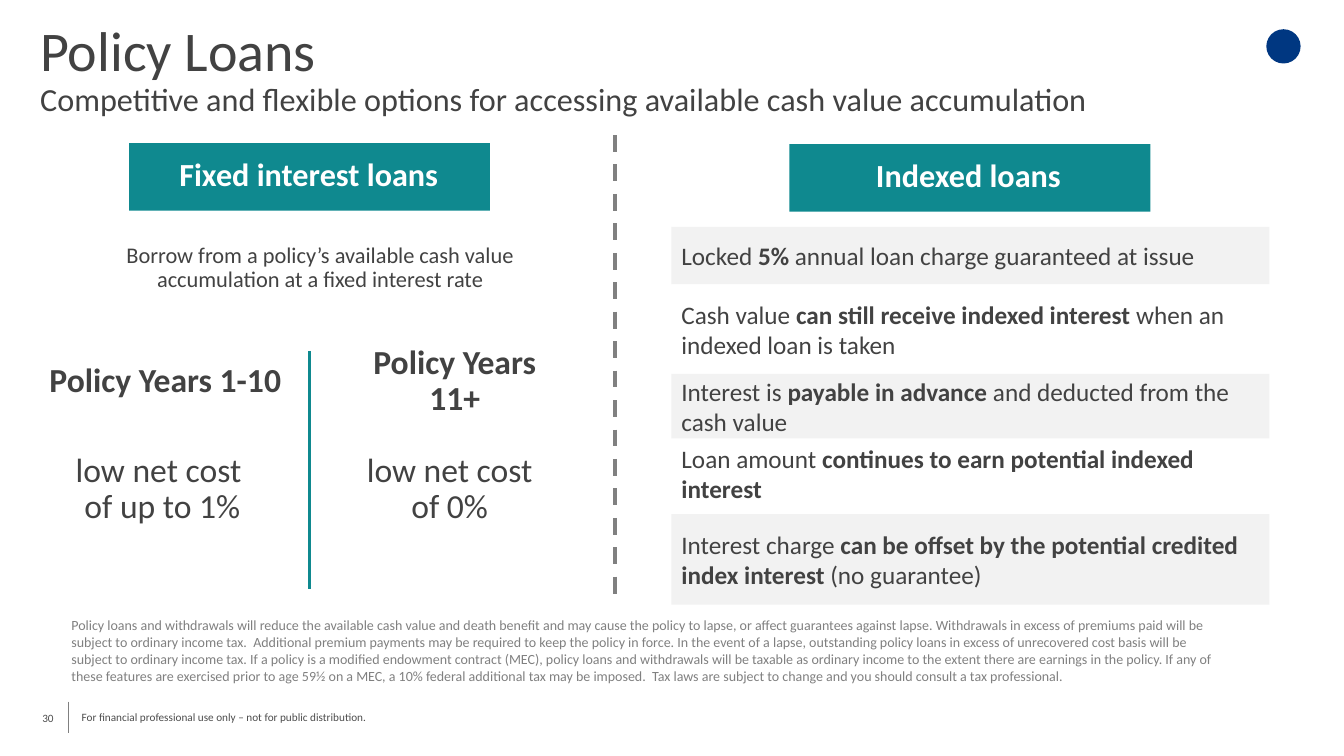
from itertools import cycle

from lxml.etree import SubElement
from pptx import Presentation
from pptx.dml.color import RGBColor
from pptx.enum.dml import MSO_LINE
from pptx.enum.shapes import MSO_CONNECTOR, MSO_SHAPE
from pptx.enum.text import MSO_ANCHOR, PP_ALIGN
from pptx.oxml.ns import qn
from pptx.util import Pt

SCALE = 9144  # EMU in one px, 100 px to the inch

TEAL = RGBColor(0x0F, 0x89, 0x8F)
NAVY = RGBColor(0x00, 0x37, 0x81)
DARK = RGBColor(0x42, 0x42, 0x42)
SLATE = RGBColor(0x4D, 0x4D, 0x4D)
GRAY = RGBColor(0x80, 0x80, 0x80)
PALE = RGBColor(0xF2, 0xF2, 0xF2)
WHITE = RGBColor(0xFF, 0xFF, 0xFF)

LEFT, CENTER = PP_ALIGN.LEFT, PP_ALIGN.CENTER
TOP, MIDDLE = MSO_ANCHOR.TOP, MSO_ANCHOR.MIDDLE

NOTICE = (
    "Policy loans and withdrawals will reduce the available cash value and death "
    "benefit and may cause the policy to lapse, or affect guarantees against lapse. "
    "Withdrawals in excess of premiums paid will be subject to ordinary income tax.  "
    "Additional premium payments may be required to keep the policy in force. In the "
    "event of a lapse, outstanding policy loans in excess of unrecovered cost basis "
    "will be subject to ordinary income tax. If a policy is a modified endowment "
    "contract (MEC), policy loans and withdrawals will be taxable as ordinary income "
    "to the extent there are earnings in the policy. If any of these features are "
    "exercised prior to age 59½ on a MEC, a 10% federal additional tax may be "
    "imposed.  Tax laws are subject to change and you should consult a tax "
    "professional."
)

# top, left-over width, height, fill and wording of each loan feature
FEATURES = [
    (275, 589, 104, WHITE,
     "Cash value *can still receive indexed interest *when an indexed loan is taken"),
    (371, 593, 64, PALE,
     "Interest is *payable in advance *and deducted from the cash value"),
    (438, 589, 64, WHITE,
     "Loan amount *continues to earn potential indexed interest"),
    (510, 593, 90, PALE,
     "Interest charge *can be offset by the potential credited index interest "
     "*(no guarantee)"),
    (225, 593, 57, PALE,
     "Locked *5% *annual loan charge guaranteed at issue"),
]


def scale(*lengths):
    return [length * SCALE for length in lengths]


def write(frame, text, sizes=(18,), color=DARK, bold=False, align=LEFT,
          anchor=TOP, spacing=None, wrap=True, inset=(10, 5, 10, 5)):
    """Fill a frame; a newline starts a paragraph and * toggles bold."""
    frame.word_wrap = wrap
    frame.vertical_anchor = anchor
    (frame.margin_left, frame.margin_top,
     frame.margin_right, frame.margin_bottom) = scale(*inset)
    for index, (line, size) in enumerate(zip(text.split("\n"), cycle(sizes))):
        para = frame.add_paragraph() if index else frame.paragraphs[0]
        para.alignment = align
        para.line_spacing = spacing
        for turn, part in enumerate(line.split("*")):
            run = para.add_run()
            run.text = part
            run.font.name = "Calibri"
            run.font.size = Pt(size)
            run.font.bold = bold or turn % 2 == 1
            run.font.color.rgb = color


class Deck:
    def __init__(self):
        self.show = Presentation()
        self.show.slide_width, self.show.slide_height = scale(1333, 750)
        self.slide = self.show.slides.add_slide(self.show.slide_layouts[6])

    def text(self, box, text, **style):
        write(self.slide.shapes.add_textbox(*scale(*box)).text_frame, text, **style)

    def shape(self, box, fill, text="", kind=MSO_SHAPE.RECTANGLE, **style):
        shape = self.slide.shapes.add_shape(kind, *scale(*box))
        shape.shadow.inherit = False
        shape.fill.solid()
        shape.fill.fore_color.rgb = fill
        shape.line.fill.background()
        if text:
            write(shape.text_frame, text, **style)

    def rule(self, x, top, bottom, color, width, dash=None):
        """Draw a vertical line."""
        line = self.slide.shapes.add_connector(
            MSO_CONNECTOR.STRAIGHT, *scale(x, top, x, bottom))
        line.line.color.rgb = color
        line.line.width = Pt(width)
        if dash:
            line.line.dash_style = dash
        SubElement(line._element.spPr, qn("a:effectLst"))


def main():
    deck = Deck()

    # Footer and emblem
    deck.text((81, 699, 1191, 26),
              "For financial professional use only – not for public distribution.",
              sizes=(8,), color=SLATE, inset=(0, 6, 12, 6))
    deck.shape((1256, 29, 34, 34), NAVY, kind=MSO_SHAPE.OVAL)
    deck.rule(68, 696, 727, GRAY, 0.75)
    deck.text((42, 692, 40, 40), "30", sizes=(8,), color=SLATE,
              anchor=MIDDLE, inset=(0, 6, 0, 6))

    # Title
    deck.text((30, 18, 1075, 100),
              "Policy Loans\nCompetitive and flexible options for accessing "
              "available cash value accumulation",
              sizes=(40, 23), spacing=0.9)
    deck.rule(610, 134, 590, GRAY, 3, MSO_LINE.DASH)

    # Column headings
    for bar, label, name in [
        ((128, 142, 358, 67), (168, 153, 279, 46), "Fixed interest loans"),
        ((783, 143, 358, 67), (859, 154, 210, 44), "Indexed loans"),
    ]:
        deck.shape(bar, TEAL)
        deck.text(label, name, sizes=(23,), color=WHITE, bold=True,
                  spacing=0.9, wrap=False)

    # Fixed interest loans
    deck.text((112, 237, 411, 59),
              "Borrow from a policy’s available cash value accumulation "
              "at a fixed interest rate",
              sizes=(16,), align=CENTER, spacing=0.9)
    big = dict(sizes=(24,), align=CENTER, spacing=0.9, wrap=False)
    for head, years, body, cost in [
        ((38, 351, 252, 56), "Policy Years 1-10",
         (35, 445, 252, 97), "low net cost \nof up to 1%"),
        ((340, 348, 222, 61), "Policy Years 11+",
         (336, 445, 220, 72), "low net cost\nof 0%"),
    ]:
        deck.text(head, years, bold=True, anchor=MIDDLE, **big)
        deck.shape(body, WHITE, cost, **big)
    deck.rule(307, 348, 584, TEAL, 2.25)

    # Indexed loans
    for top, width, height, fill, text in FEATURES:
        deck.shape((666, top, width, height), fill, text, anchor=MIDDLE)

    deck.text((61, 607, 1160, 77), NOTICE, sizes=(10,), color=GRAY)
    deck.show.save("out.pptx")


if __name__ == "__main__":
    main()
